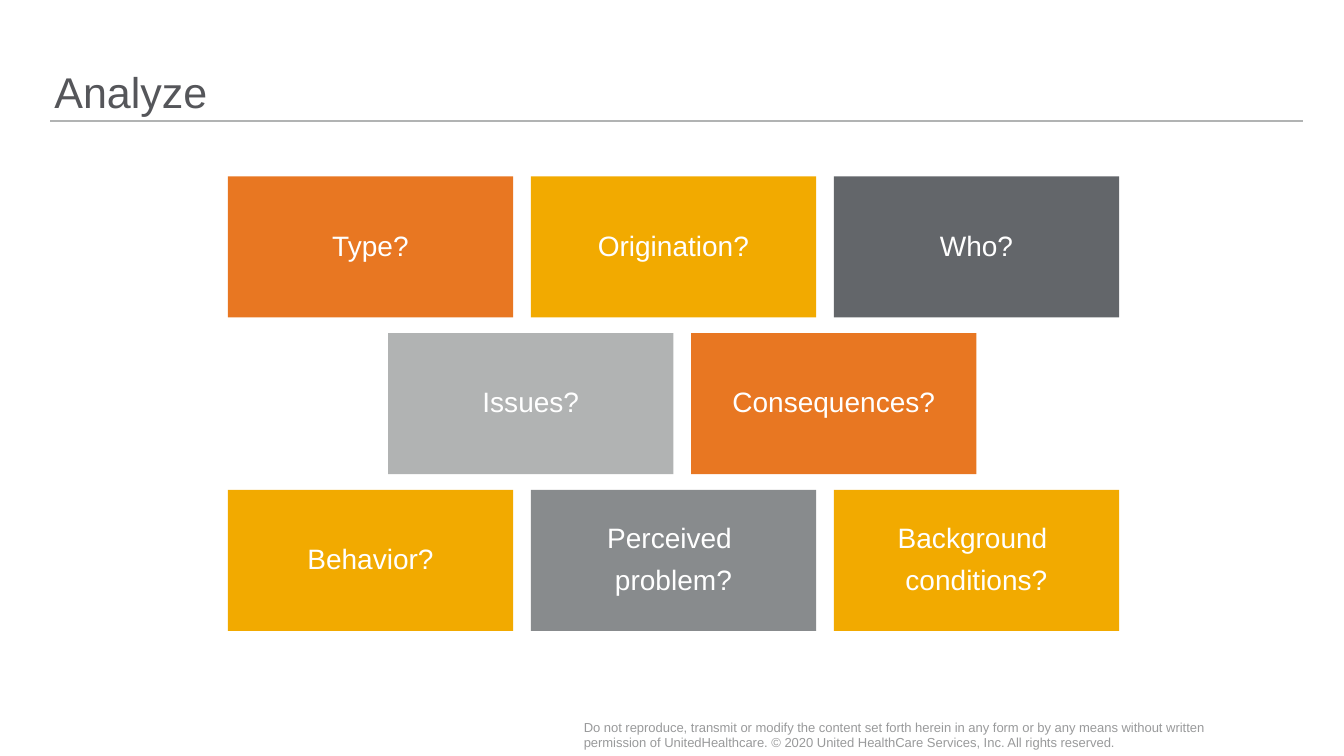
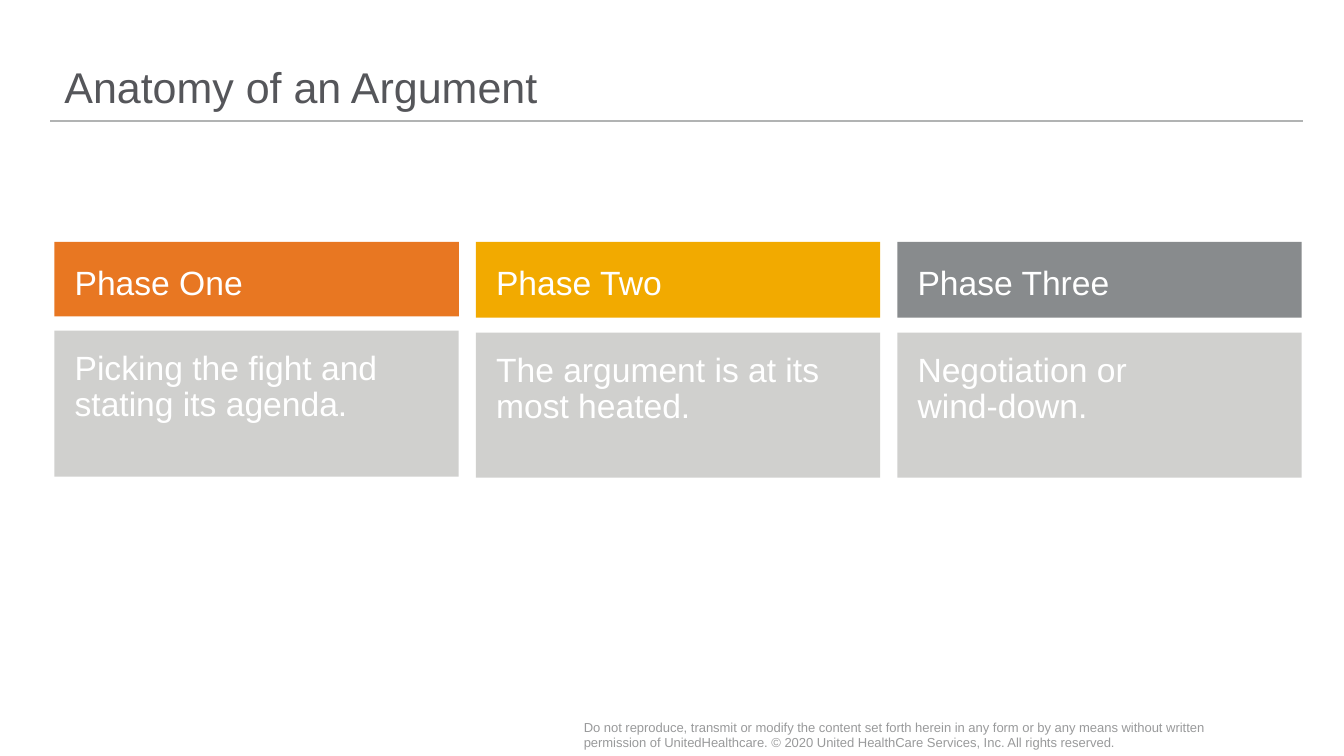
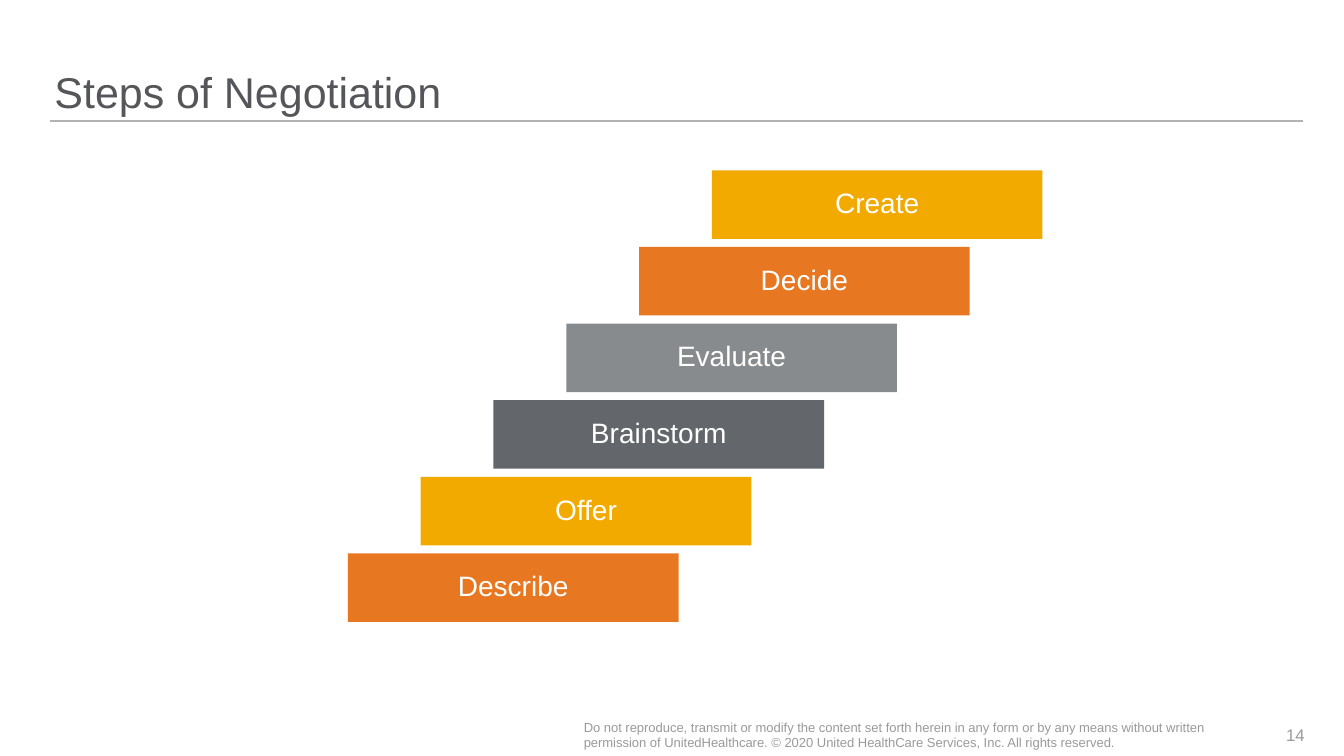
from dataclasses import dataclass

from lxml import etree
from pptx import Presentation
from pptx.dml.color import RGBColor
from pptx.enum.shapes import MSO_CONNECTOR, MSO_SHAPE
from pptx.enum.text import MSO_ANCHOR, PP_ALIGN
from pptx.oxml.ns import qn
from pptx.util import Pt


@dataclass(frozen=True)
class Theme:
    font: str = "Arial"
    title: str = "55565A"
    muted: str = "999A9B"
    rule: str = "B1B3B3"
    white: str = "FFFFFF"
    orange: str = "E87722"
    gold: str = "F2AA00"
    charcoal: str = "63666A"
    gray: str = "888B8D"
    silver: str = "B1B3B3"
    pale: str = "D0D0CE"
    title_size: float = 30.7
    phase_size: float = 24
    block_size: float = 20
    number_size: float = 12
    notice_size: float = 9.3


THEME = Theme()
PX = 9144
SLIDE_SIZE = (1333, 750)
TITLE_BOX = (54, 0, 1238, 117)
RULE = (50, 120, 1292, 120)
NOTICE_BOX = (579, 709, 648, 40)
NUMBER_BOX = (1227, 709, 67, 40)
NOTICE = (
    "Do not reproduce, transmit or modify the content set forth herein in any form "
    "or by any means without written permission of UnitedHealthcare. "
    "© 2020 United HealthCare Services, Inc. All rights reserved."
)

QUESTION_ROWS = [
    (226, [("Type?", THEME.orange), ("Origination?", THEME.gold), ("Who?", THEME.charcoal)]),
    (385, [("Issues?", THEME.silver), ("Consequences?", THEME.orange)]),
    (226, [
        ("Behavior?", THEME.gold),
        ("Perceived \nproblem?", THEME.gray),
        ("Background \nconditions?", THEME.gold),
    ]),
]
QUESTION_GRID = (175, 884, 451)
QUESTION_SIZE = (283, 140)

PHASES = [
    ("Phase One", THEME.orange, 74, "Picking the fight and stating its agenda.", 328, 145),
    ("Phase Two", THEME.gold, 75, "The argument is at its\vmost heated.", 330, 144),
    ("Phase Three", THEME.gray, 75, "Negotiation or\vwind-down.", 330, 144),
]
PHASE_LEFT, PHASE_TOP, PHASE_WIDTH, PHASE_PITCH = 54, 240, 401, 418

STEPS = [
    ("Describe", THEME.orange),
    ("Offer", THEME.gold),
    ("Brainstorm", THEME.charcoal),
    ("Evaluate", THEME.gray),
    ("Decide", THEME.orange),
    ("Create", THEME.gold),
]
STEP_START, STEP_END = (345, 549), (706, 169)
STEP_SIZE = (328, 68)


def emu(*lengths):
    return [round(length * PX) for length in lengths]


def write(holder, text, size, color, insets=(0, 0, 0, 0), anchor=MSO_ANCHOR.MIDDLE,
          align=PP_ALIGN.LEFT, line_spacing=None, after=None):
    frame = holder.text_frame
    frame.word_wrap = True
    frame.vertical_anchor = anchor
    (frame.margin_left, frame.margin_top,
     frame.margin_right, frame.margin_bottom) = emu(*insets)
    frame.text = text
    for paragraph in frame.paragraphs:
        paragraph.alignment = align
        paragraph.line_spacing = line_spacing
        paragraph.space_after = after
        paragraph.font.name = THEME.font
        paragraph.font.size = Pt(size)
        paragraph.font.color.rgb = RGBColor.from_string(color)


def add_label(slide, box, text, size, color, **style):
    write(slide.shapes.add_textbox(*emu(*box)), text, size, color, **style)


def add_panel(slide, box, fill, kind=MSO_SHAPE.RECTANGLE):
    panel = slide.shapes.add_shape(kind, *emu(*box))
    panel.shadow.inherit = False
    panel.fill.solid()
    panel.fill.fore_color.rgb = RGBColor.from_string(fill)
    panel.line.fill.background()
    return panel


def add_block(slide, box, text, fill):
    write(add_panel(slide, box, fill), text, THEME.block_size, THEME.white,
          insets=(7, 7, 7, 7), align=PP_ALIGN.CENTER, line_spacing=0.9, after=Pt(8))


def add_slide(deck, title, title_insets=(0, 0, 0, 0), number=None):
    slide = deck.slides.add_slide(deck.slide_layouts[6])
    rule = slide.shapes.add_connector(MSO_CONNECTOR.STRAIGHT, *emu(*RULE))
    rule.line.color.rgb = RGBColor.from_string(THEME.rule)
    rule.line.width = Pt(1)
    etree.SubElement(rule._element.spPr, qn("a:effectLst"))
    add_label(slide, TITLE_BOX, title, THEME.title_size, THEME.title,
              insets=title_insets, anchor=MSO_ANCHOR.BOTTOM, line_spacing=0.9)
    add_label(slide, NOTICE_BOX, NOTICE, THEME.notice_size, THEME.muted)
    if number:
        add_label(slide, NUMBER_BOX, number, THEME.number_size, THEME.muted,
                  align=PP_ALIGN.RIGHT)
    return slide


def build_analyze(deck):
    slide = add_slide(deck, "Analyze")
    top, grid_width, grid_height = QUESTION_GRID
    width, height = QUESTION_SIZE
    column_pitch = (grid_width - width) / 2
    row_pitch = (grid_height - height) / (len(QUESTION_ROWS) - 1)
    for row, (left, questions) in enumerate(QUESTION_ROWS):
        for column, (question, fill) in enumerate(questions):
            box = (left + column * column_pitch, top + row * row_pitch, width, height)
            add_block(slide, box, question, fill)


def build_argument(deck):
    slide = add_slide(deck, "Anatomy of an Argument", title_insets=(10, 5, 10, 5))
    for index, (name, fill, height, summary, summary_top, summary_height) in enumerate(PHASES):
        left = PHASE_LEFT + index * PHASE_PITCH
        body = add_panel(slide, (left, summary_top, PHASE_WIDTH, summary_height), THEME.pale)
        write(body, summary, THEME.phase_size, THEME.white, insets=(20, 20, 0, 0),
              anchor=MSO_ANCHOR.TOP, line_spacing=Pt(26), after=Pt(6))
        heading = add_panel(slide, (left, PHASE_TOP, PHASE_WIDTH, height), fill,
                            MSO_SHAPE.ROUNDED_RECTANGLE)
        heading.adjustments[0] = 0
        write(heading, name, THEME.phase_size, THEME.white, insets=(20, 20, 10, 5),
              anchor=MSO_ANCHOR.TOP)


def build_negotiation(deck):
    slide = add_slide(deck, "Steps of Negotiation", number="14")
    for index, (step, fill) in enumerate(STEPS):
        progress = index / (len(STEPS) - 1)
        left, top = (start + (end - start) * progress
                     for start, end in zip(STEP_START, STEP_END))
        add_block(slide, (left, top, *STEP_SIZE), step, fill)


def main():
    deck = Presentation()
    deck.slide_width, deck.slide_height = emu(*SLIDE_SIZE)
    build_analyze(deck)
    build_argument(deck)
    build_negotiation(deck)
    deck.save("out.pptx")


if __name__ == "__main__":
    main()
